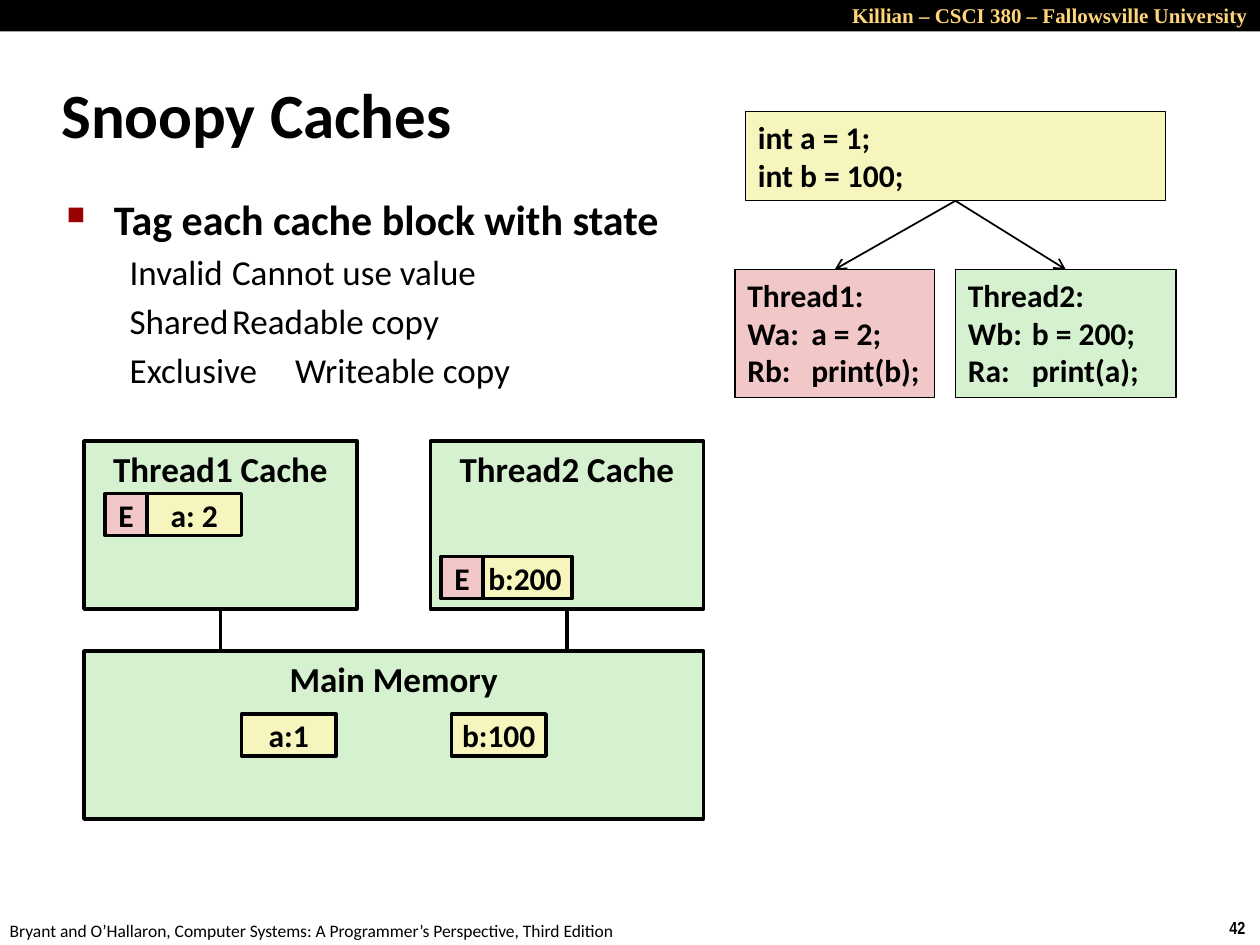
from lxml import etree
from pptx import Presentation
from pptx.dml.color import RGBColor
from pptx.enum.shapes import MSO_CONNECTOR, MSO_SHAPE
from pptx.enum.text import MSO_ANCHOR, PP_ALIGN
from pptx.oxml.ns import qn
from pptx.util import Pt

RECT = MSO_SHAPE.RECTANGLE
LINE = MSO_CONNECTOR.STRAIGHT
TOP, MIDDLE = MSO_ANCHOR.TOP, MSO_ANCHOR.MIDDLE
LEFT, CENTER, RIGHT = PP_ALIGN.LEFT, PP_ALIGN.CENTER, PP_ALIGN.RIGHT

BLACK = RGBColor(0x00, 0x00, 0x00)
WHITE = RGBColor(0xFF, 0xFF, 0xFF)
GOLD = RGBColor(0xFF, 0xD5, 0x79)
GREEN = RGBColor(0xD5, 0xF1, 0xCF)
YELLOW = RGBColor(0xF6, 0xF5, 0xBD)
PINK = RGBColor(0xF1, 0xC7, 0xC7)
RED = "990000"

BOTTOM_SITE, TOP_SITE = 2, 0
CELL_W, CELL_H, TAG_W = 54, 24, 24
STATES = ["Invalid\tCannot use value", "Shared\tReadable copy",
          "Exclusive\tWriteable copy"]


def style(para, size, bold=True, color=BLACK, font="Calibri", align=LEFT):
    para.alignment = align
    for run in para.runs:
        run.font.size = Pt(size)
        run.font.bold = bold
        run.font.color.rgb = color
        run.font.name = font


def add_text(slide, box, text, size, wrap=True, anchor=TOP, **look):
    shape = slide.shapes.add_textbox(*map(Pt, box))
    frame = shape.text_frame
    frame.text = text
    frame.word_wrap = wrap
    frame.vertical_anchor = anchor
    for para in frame.paragraphs:
        style(para, size, **look)
    return shape


def add_box(slide, box, fill, text="", size=18, width=2, align=CENTER,
            anchor=TOP, wrap=True):
    shape = slide.shapes.add_shape(RECT, *map(Pt, box))
    shape.shadow.inherit = False
    shape.fill.solid()
    shape.fill.fore_color.rgb = fill
    if width:
        shape.line.color.rgb = BLACK
        shape.line.width = Pt(width)
    else:
        shape.line.fill.background()
    frame = shape.text_frame
    frame.text = text
    frame.word_wrap = wrap
    frame.vertical_anchor = anchor
    for para in frame.paragraphs:
        style(para, size, align=align)
    return shape


def add_cell(slide, left, top, text, fill=YELLOW, width=CELL_W):
    add_box(slide, (left, top, width, CELL_H), fill, text,
            anchor=MIDDLE, wrap=False)


def add_block(slide, left, top, text, gap=TAG_W):
    add_cell(slide, left + gap, top, text)
    add_cell(slide, left, top, "E", PINK, TAG_W)


def add_line(slide, start, end, width):
    line = slide.shapes.add_connector(LINE, *map(Pt, start + end))
    line.line.color.rgb = BLACK
    line.line.width = Pt(width)
    etree.SubElement(line._element.spPr, qn("a:effectLst"))
    return line


def add_arrow(slide, source, target):
    line = add_line(slide, (0, 0), (0, 0), 1)
    line.begin_connect(source, BOTTOM_SITE)
    line.end_connect(target, TOP_SITE)
    tail = etree.SubElement(line.line._get_or_add_ln(), qn("a:tailEnd"))
    tail.set("type", "arrow")


def add_code(slide, box, fill, text):
    shape = add_box(slide, box, fill, text, width=0.75, align=LEFT)
    for para in shape.text_frame.paragraphs:
        tabs = etree.SubElement(para._p.get_or_add_pPr(), qn("a:tabLst"))
        tab = etree.SubElement(tabs, qn("a:tab"))
        tab.set("pos", str(Pt(36.5)))
        tab.set("algn", "l")
    return shape


def indent(para, margin, first):
    props = para._p.get_or_add_pPr()
    props.set("marL", str(Pt(margin)))
    props.set("indent", str(Pt(first)))
    return props


def add_bullet(para):
    props = indent(para, 27, -27)
    color = etree.SubElement(props, qn("a:buClr"))
    etree.SubElement(color, qn("a:srgbClr")).set("val", RED)
    etree.SubElement(props, qn("a:buSzPct")).set("val", "60000")
    etree.SubElement(props, qn("a:buChar")).set("char", "■")


def add_frame(slide):
    add_text(slide, (695.5, 520.5, 24.5, 19.5), "42", 10, wrap=False,
             font="Arial Narrow")
    add_text(slide, (-1.5, 522, 366, 19.5),
             "Bryant and O’Hallaron, Computer Systems: "
             "A Programmer’s Perspective, Third Edition",
             10, wrap=False, bold=False)
    add_box(slide, (0, 0, 720, 18), BLACK, width=0)
    add_text(slide, (324, -2, 396, 21.5),
             "Killian – CSCI 380 – Fallowsville University", 12,
             color=GOLD, font="Times New Roman", align=RIGHT)


def add_states(slide):
    body = add_text(slide, (31, 107, 622, 120),
                    "\n".join(["Tag each cache block with state"] + STATES), 20,
                    bold=False)
    head, *rest = body.text_frame.paragraphs
    style(head, 24)
    head.space_before = Pt(4.8)
    add_bullet(head)
    for para in rest:
        para.space_before = Pt(4)
        indent(para, 58.5, -22.5)


def add_memory(slide):
    add_box(slide, (48, 372, 354, 96), GREEN, "Main Memory", 20)
    add_cell(slide, 138, 408, "a:1")
    add_cell(slide, 258, 408, "b:100")
    for left, name in ((48, "Thread1 Cache"), (246, "Thread2 Cache")):
        cache = add_box(slide, (left, 252, 156, 96), GREEN, name, 20)
        mid = left + 78
        link = add_line(slide, (mid, 372), (mid, 348), 2)
        link.end_connect(cache, BOTTOM_SITE)
    add_block(slide, 60, 282, "a: 2")
    add_block(slide, 252, 318, "b:200", 21)


def add_threads(slide):
    init = add_box(slide, (426, 63.75, 240, 51), YELLOW,
                   "int a = 1;\nint b = 100;", width=0.75, align=LEFT)
    for left, width, fill, text in (
            (420, 114, PINK, "Thread1:\nWa:\ta = 2;\nRb:\tprint(b);"),
            (546, 126, GREEN, "Thread2:\nWb:\tb = 200;\nRa:\tprint(a);")):
        thread = add_code(slide, (left, 154, width, 73), fill, text)
        add_arrow(slide, init, thread)


def main():
    deck = Presentation()
    deck.slide_width, deck.slide_height = Pt(720), Pt(540)
    slide = deck.slides.add_slide(deck.slide_layouts[6])
    slide.background.fill.solid()
    slide.background.fill.fore_color.rgb = WHITE
    add_frame(slide)
    add_text(slide, (28, 34.5, 598, 60), "Snoopy Caches", 36, anchor=MIDDLE)
    add_states(slide)
    add_memory(slide)
    add_threads(slide)
    deck.save("out.pptx")


if __name__ == "__main__":
    main()
